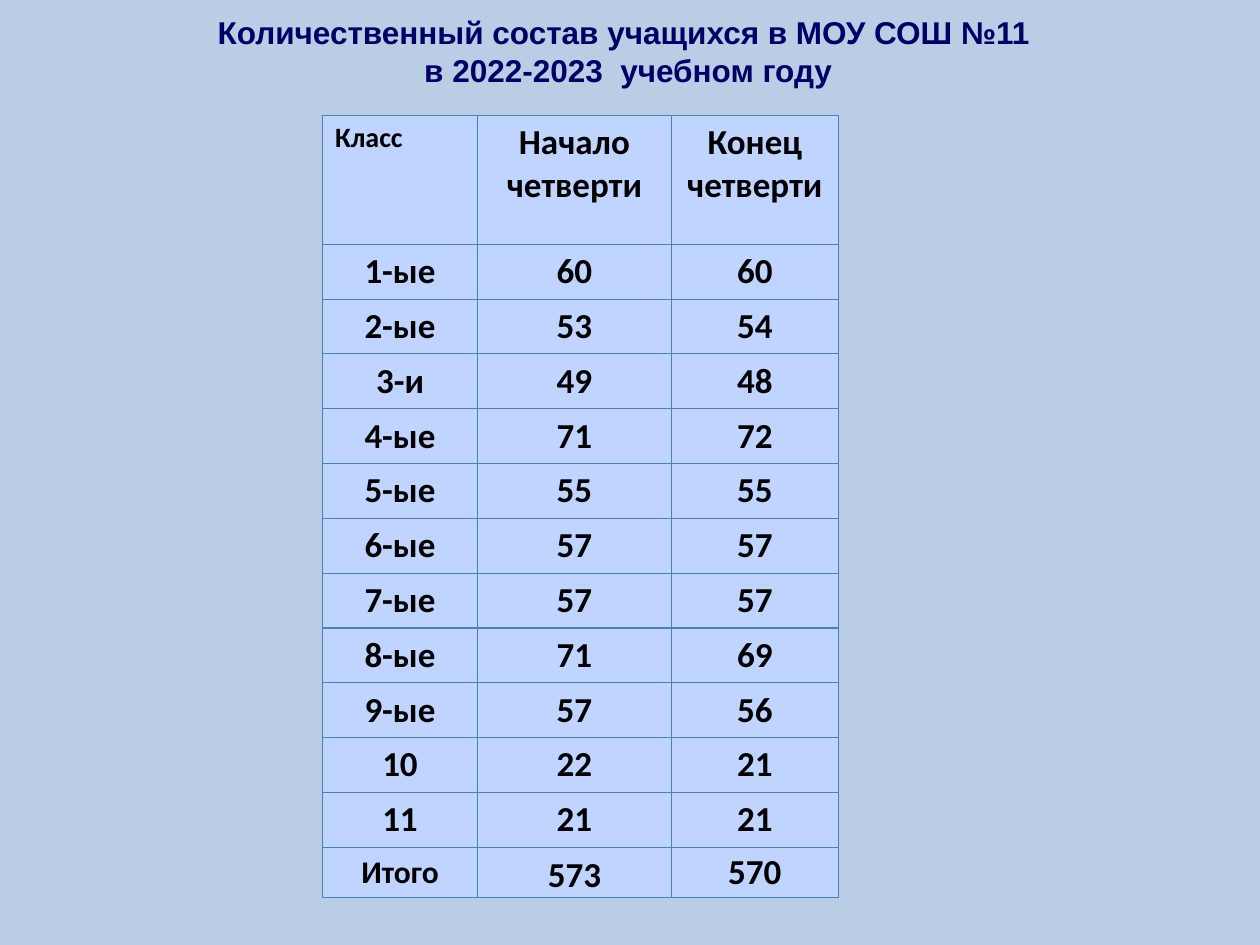
from lxml import etree
from pptx import Presentation
from pptx.dml.color import RGBColor
from pptx.enum import text
from pptx.oxml import ns
from pptx.util import Pt

BACKGROUND = RGBColor(0xB9, 0xCD, 0xE5)
NAVY = RGBColor(0x00, 0x00, 0x66)
BLACK = RGBColor(0x00, 0x00, 0x00)
CELL_FILL = RGBColor(0xBF, 0xD4, 0xFF)
BORDER = RGBColor(0x4B, 0x7E, 0xBC)

TITLE = ["Количественный состав учащихся в МОУ СОШ №11",
         " в 2022-2023  учебном году"]
HEADER = ["Класс", "Начало\nчетверти", "Конец\nчетверти"]
CLASSES = [
    ("1-ые", 60, 60), ("2-ые", 53, 54), ("3-и", 49, 48), ("4-ые", 71, 72),
    ("5-ые", 55, 55), ("6-ые", 57, 57), ("7-ые", 57, 57), ("8-ые", 71, 69),
    ("9-ые", 57, 56), ("10", 22, 21), ("11", 21, 21),
]
TOTAL = ("Итого", 573, 570)
COLUMN_WIDTHS = [88.6, 110.8, 95.4]
ROW_HEIGHTS = [73.7] + [31.33] * len(CLASSES) + [28.6]


class SlideBuilder:
    title_font = "Arial"
    table_font = "Calibri"

    def __init__(self, slide):
        self.slide = slide
        slide.background.fill.solid()
        slide.background.fill.fore_color.rgb = BACKGROUND

    def set_text(self, frame, lines, font, size, color):
        frame.text = "\n".join(lines)
        for paragraph in frame.paragraphs:
            paragraph.alignment = text.PP_ALIGN.CENTER
            paragraph.font.name = font
            paragraph.font.size = Pt(size)
            paragraph.font.bold = True
            paragraph.font.color.rgb = color

    def title(self, lines, left, top, width, height):
        frame = self.slide.shapes.add_textbox(
            Pt(left), Pt(top), Pt(width), Pt(height)).text_frame
        frame.word_wrap = True
        frame.vertical_anchor = text.MSO_ANCHOR.TOP
        frame.margin_left = Pt(42.5)
        frame.margin_top = Pt(5.5)
        self.set_text(frame, lines, self.title_font, 18, NAVY)

    def table(self, rows, left, top, widths, heights):
        shape = self.slide.shapes.add_table(
            len(rows), len(widths), Pt(left), Pt(top),
            Pt(sum(widths)), Pt(sum(heights)))
        table = shape.table
        for column, width in zip(table.columns, widths):
            column.width = Pt(width)
        for row, height in zip(table.rows, heights):
            row.height = Pt(height)
        for row_index, values in enumerate(rows):
            for column_index, value in enumerate(values):
                self.cell(table.cell(row_index, column_index), str(value),
                          is_header=row_index == 0, is_label=column_index == 0)
        return table

    def cell(self, cell, value, is_header, is_label):
        self.borders(cell)
        cell.fill.solid()
        cell.fill.fore_color.rgb = CELL_FILL
        padded = is_header or is_label
        cell.margin_left = cell.margin_right = Pt(7.2 if padded else 5.4)
        cell.margin_top = cell.margin_bottom = Pt(3.3 if padded else 0)
        cell.vertical_anchor = (
            text.MSO_ANCHOR.TOP if is_header else text.MSO_ANCHOR.MIDDLE)
        self.set_text(cell.text_frame, value.split("\n"), self.table_font, 20, BLACK)

    def borders(self, cell):
        properties = cell._tc.get_or_add_tcPr()
        for side in ("a:lnL", "a:lnR", "a:lnT", "a:lnB"):
            line = etree.SubElement(properties, ns.qn(side), w=str(Pt(0.75)))
            fill = etree.SubElement(line, ns.qn("a:solidFill"))
            etree.SubElement(fill, ns.qn("a:srgbClr"), val=str(BORDER))


def main():
    presentation = Presentation()
    presentation.slide_width, presentation.slide_height = Pt(720), Pt(540)
    builder = SlideBuilder(
        presentation.slides.add_slide(presentation.slide_layouts[6]))
    builder.title(TITLE, -49.7, 2.2, 776.9, 94.3)
    table = builder.table([HEADER, *CLASSES, TOTAL], 184.3, 65.9,
                          COLUMN_WIDTHS, ROW_HEIGHTS)

    class_heading = table.cell(0, 0).text_frame.paragraphs[0]
    class_heading.alignment = text.PP_ALIGN.LEFT
    class_heading.font.size = Pt(16)
    last_row = len(ROW_HEIGHTS) - 1
    table.cell(last_row, 0).text_frame.paragraphs[0].font.size = Pt(18)
    table.cell(last_row, 1).text_frame.paragraphs[0].line_spacing = 1.15
    presentation.save("out.pptx")


if __name__ == "__main__":
    main()
